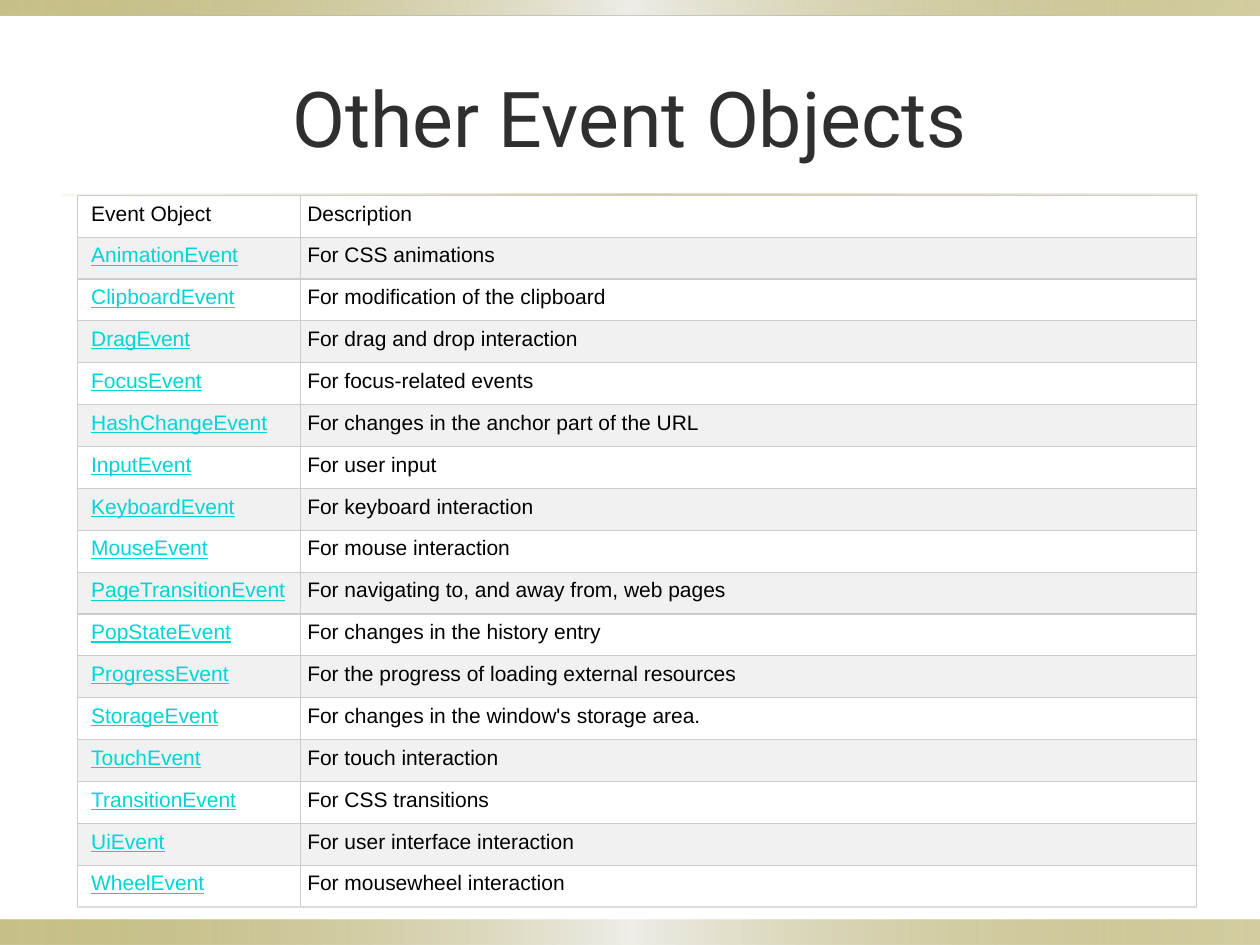
import pptx
import pptx.dml.color
import pptx.enum.shapes
import pptx.enum.text
import pptx.oxml.ns
import pptx.util
from lxml import etree

Pt = pptx.util.Pt
qn = pptx.oxml.ns.qn

EVENTS = [
    ("AnimationEvent", "For CSS animations"),
    ("ClipboardEvent", "For modification of the clipboard"),
    ("DragEvent", "For drag and drop interaction"),
    ("FocusEvent", "For focus-related events"),
    ("HashChangeEvent", "For changes in the anchor part of the URL"),
    ("InputEvent", "For user input"),
    ("KeyboardEvent", "For keyboard interaction"),
    ("MouseEvent", "For mouse interaction"),
    ("PageTransitionEvent", "For navigating to, and away from, web pages"),
    ("PopStateEvent", "For changes in the history entry"),
    ("ProgressEvent", "For the progress of loading external resources"),
    ("StorageEvent", "For changes in the window's storage area."),
    ("TouchEvent", "For touch interaction"),
    ("TransitionEvent", "For CSS transitions"),
    ("UiEvent", "For user interface interaction"),
    ("WheelEvent", "For mousewheel interaction"),
]

# Gradient stops: position, colour, opacity (all but colour in percent)
BAR = [(0, "918415", 50), (50, "EEEDE8", 100), (100, "918415", 40)]
RULE = [(0, "DCD9CC", 20), (50, "918415", 40), (100, "DCD9CC", 50)]


def color(value):
    return pptx.dml.color.RGBColor.from_string(value)


def apply(target, values):
    for name, value in values.items():
        setattr(target, name, value)


class Slide:
    heading = {"name": "Roboto", "size": Pt(44), "bold": False}
    body = {"name": "Arial", "size": Pt(12), "bold": False}
    link = {**body, "underline": True}
    ink, link_ink = "000000", "00D5D5"

    def __init__(self, deck):
        self.page = deck.slides.add_slide(deck.slide_layouts[5])

    def title(self, text, left, top, width, height):
        box = self.page.shapes.title
        apply(box, {"left": Pt(left), "top": Pt(top),
                    "width": Pt(width), "height": Pt(height)})
        box.text_frame.vertical_anchor = pptx.enum.text.MSO_ANCHOR.MIDDLE
        para = box.text_frame.paragraphs[0]
        para.alignment = pptx.enum.text.PP_ALIGN.CENTER
        self.span(para, text, self.heading, "2F2F2F")

    def span(self, para, text, style, ink):
        span = para.add_run()
        span.text = text
        apply(span.font, style)
        span.font.color.rgb = color(ink)

    def band(self, left, top, width, height, stops):
        shape = self.page.shapes.add_shape(
            pptx.enum.shapes.MSO_SHAPE.RECTANGLE,
            Pt(left), Pt(top), Pt(width), Pt(height))
        shape.shadow.inherit = False
        shape.line.fill.background()
        shape.fill.gradient()
        shape.fill.gradient_angle = 0
        stop_list = next(shape.element.iter(qn("a:gsLst")))
        for old in list(stop_list):
            stop_list.remove(old)
        for position, ink, opacity in stops:
            stop = etree.SubElement(stop_list, qn("a:gs"), pos=str(position * 1000))
            tint = etree.SubElement(stop, qn("a:srgbClr"), val=ink)
            etree.SubElement(tint, qn("a:alpha"), val=str(opacity * 1000))

    def borders(self, cell, bottom):
        properties = cell._tc.get_or_add_tcPr()
        for side in "LRTB":
            line = etree.SubElement(properties, qn("a:ln" + side), w=str(Pt(0.75)))
            fill = etree.SubElement(line, qn("a:solidFill"))
            etree.SubElement(fill, qn("a:srgbClr"),
                             val=bottom if side == "B" else "CCCCCC")

    def table(self, rows, left, top, widths, height):
        table = self.page.shapes.add_table(
            len(rows), len(widths), Pt(left), Pt(top),
            Pt(sum(widths)), Pt(height)).table
        apply(table, {"first_row": False, "horz_banding": False})
        for column, width in zip(table.columns, widths):
            column.width = Pt(width)
        for r, texts in enumerate(rows):
            table.rows[r].height = Pt(height / len(rows))
            for c, text in enumerate(texts):
                cell = table.cell(r, c)
                apply(cell, {"margin_left": Pt(3.8 if c else 7.6),
                             "margin_right": Pt(3.8),
                             "margin_top": Pt(3.8), "margin_bottom": Pt(3.8)})
                self.borders(cell, "DDDDDD" if r == len(rows) - 1 else "CCCCCC")
                cell.fill.solid()
                cell.fill.fore_color.rgb = color("F1F1F1" if r % 2 else "FFFFFF")
                linked = r > 0 and c == 0
                self.span(cell.text_frame.paragraphs[0], text,
                          self.link if linked else self.body,
                          self.link_ink if linked else self.ink)


def main():
    deck = pptx.Presentation()
    apply(deck, {"slide_width": Pt(720), "slide_height": Pt(540)})
    slide = Slide(deck)

    # Bars at the slide edges and the rule below the title
    slide.band(0, 525.6, 720, 14.4, BAR)
    slide.band(0, 0, 720, 8.64, BAR)
    slide.band(36, 110.9, 648, 1.2, RULE)

    # Title and event table
    slide.title("Other Event Objects", 36, 21.6, 648, 90)
    slide.table([("Event Object", "Description")] + EVENTS,
                44.5, 111.6, [127.3, 512], 407)

    deck.save("out.pptx")


if __name__ == "__main__":
    main()
